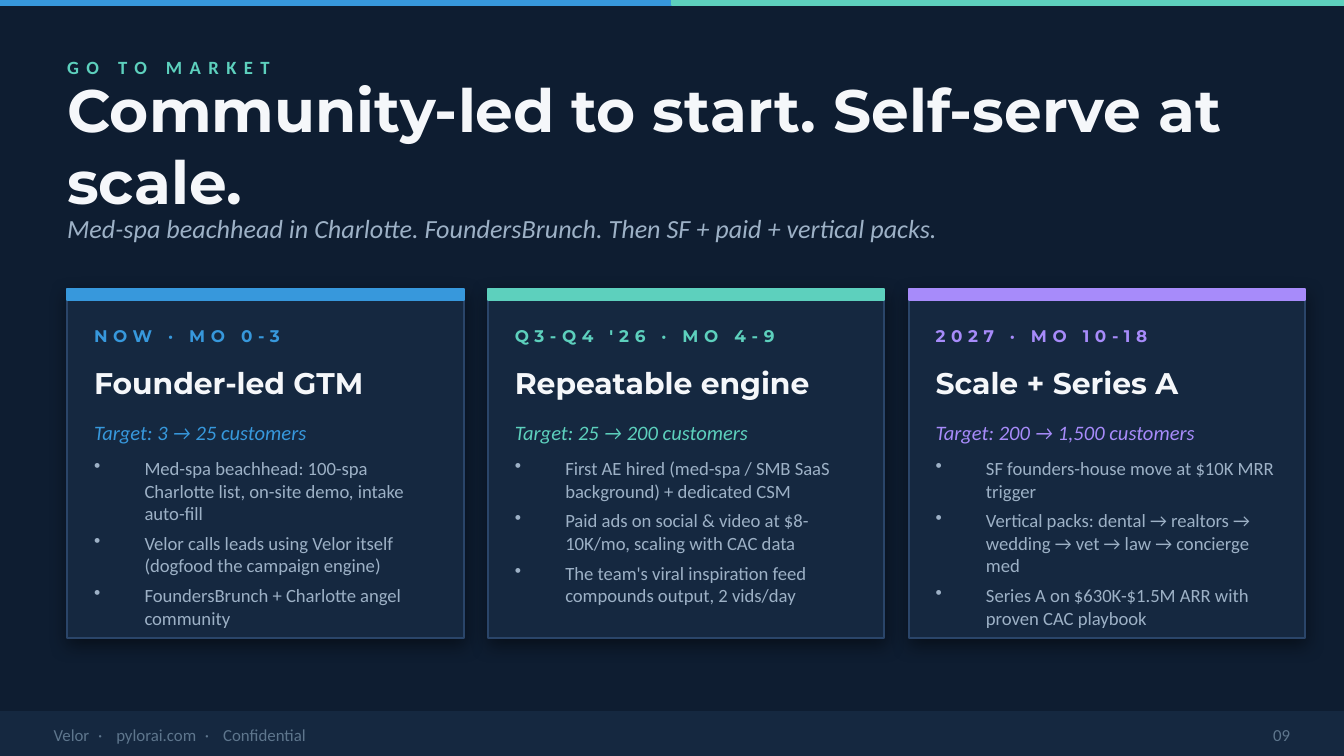
from dataclasses import dataclass

from lxml import etree
from pptx import Presentation
from pptx.dml.color import RGBColor
from pptx.enum import shapes, text
from pptx.oxml import ns
from pptx.util import Pt

NAVY, PANEL, EDGE = "0E1D31", "152840", "2A4569"
BLUE, TEAL, PURPLE = "3798DC", "5DD0BD", "A78BFA"
WHITE, MUTED, DIM = "F5F7FA", "9DB1C6", "5E768D"
BODY, HEADING = "Calibri", "Montserrat"
PAGE_WIDTH, PAGE_HEIGHT = 720, 405
MARGIN, CARD_TOP, CARD_WIDTH, CARD_HEIGHT = 36, 154.8, 212.4, 187.2
CARD_GAP, CARD_PADDING, BULLET_INDENT = 13, 14.4, 27


@dataclass(frozen=True)
class Area:
    left: float
    top: float
    width: float
    height: float


@dataclass(frozen=True)
class Style:
    size: float
    color: str
    name: str = BODY
    bold: bool = False
    italic: bool = False
    spacing: float = 0


@dataclass(frozen=True)
class Phase:
    period: str
    title: str
    target: str
    color: str
    actions: tuple[str, ...]


PHASES = (
    Phase("NOW · MO 0-3", "Founder-led GTM", "Target: 3 → 25 customers", BLUE, (
        "Med-spa beachhead: 100-spa Charlotte list, on-site demo, intake auto-fill",
        "Velor calls leads using Velor itself (dogfood the campaign engine)",
        "FoundersBrunch + Charlotte angel community")),
    Phase("Q3-Q4 '26 · MO 4-9", "Repeatable engine", "Target: 25 → 200 customers", TEAL, (
        "First AE hired (med-spa / SMB SaaS background) + dedicated CSM",
        "Paid ads on social & video at $8-10K/mo, scaling with CAC data",
        "The team's viral inspiration feed compounds output, 2 vids/day")),
    Phase("2027 · MO 10-18", "Scale + Series A", "Target: 200 → 1,500 customers", PURPLE, (
        "SF founders-house move at $10K MRR trigger",
        "Vertical packs: dental → realtors → wedding → vet → law → concierge med",
        "Series A on $630K-$1.5M ARR with proven CAC playbook")),
)


def rgb(color: str) -> RGBColor:
    return RGBColor.from_string(color)


def place(shape, area: Area) -> None:
    shape.left, shape.top = Pt(area.left), Pt(area.top)
    shape.width, shape.height = Pt(area.width), Pt(area.height)


def add_block(page, area: Area, fill: str, line: str | None = None):
    block = page.shapes.add_shape(
        shapes.MSO_SHAPE.RECTANGLE, Pt(area.left), Pt(area.top), Pt(area.width), Pt(area.height))
    block.shadow.inherit = False
    block.fill.solid()
    block.fill.fore_color.rgb = rgb(fill)
    block.line.color.rgb = rgb(line or fill)
    block.line.width = Pt(1)
    return block


def add_shadow(shape) -> None:
    effects = shape._element.spPr.find(ns.qn("a:effectLst"))
    shadow = etree.SubElement(effects, ns.qn("a:outerShdw"), blurRad=str(Pt(10)),
                              dist=str(Pt(3)), dir="5400000", algn="bl", rotWithShape="0")
    black = etree.SubElement(shadow, ns.qn("a:srgbClr"), val="000000")
    etree.SubElement(black, ns.qn("a:alpha"), val="45000")


def set_spacing(span, points: float) -> None:
    span._r.get_or_add_rPr().set("spc", str(round(points * 100)))


def prepare_frame(shape, middle: bool = True):
    frame = shape.text_frame
    frame.word_wrap = True
    frame.auto_size = text.MSO_AUTO_SIZE.NONE
    frame.margin_left = frame.margin_right = frame.margin_top = frame.margin_bottom = 0
    frame.vertical_anchor = text.MSO_ANCHOR.MIDDLE if middle else text.MSO_ANCHOR.TOP
    return frame


def write(para, words: str, style: Style) -> None:
    span = para.add_run()
    span.text = words
    if style.spacing:
        set_spacing(span, style.spacing)
    font = para.font
    font.size, font.name = Pt(style.size), style.name
    font.bold, font.italic = style.bold, style.italic
    font.color.rgb = rgb(style.color)


def add_box(page, area: Area, middle: bool = True):
    box = page.shapes.add_textbox(Pt(0), Pt(0), Pt(0), Pt(0))
    place(box, area)
    return prepare_frame(box, middle)


def add_label(page, area: Area, words: str, style: Style):
    para = add_box(page, area).paragraphs[0]
    write(para, words, style)
    return para


def add_bullets(page, area: Area, items: tuple[str, ...], style: Style) -> None:
    frame = add_box(page, area, middle=False)
    for index, item in enumerate(items):
        para = frame.add_paragraph() if index else frame.paragraphs[0]
        para.space_after = Pt(4)
        properties = para._p.get_or_add_pPr()
        properties.set("marL", str(Pt(BULLET_INDENT)))
        properties.set("indent", str(-Pt(BULLET_INDENT)))
        etree.SubElement(properties, ns.qn("a:buChar"), char="•")
        write(para, item, style)


def add_card(page, phase: Phase, left: float) -> None:
    card = Area(left, CARD_TOP, CARD_WIDTH, CARD_HEIGHT)
    add_shadow(add_block(page, card, PANEL, EDGE))
    add_block(page, Area(left, CARD_TOP, CARD_WIDTH, 5.76), phase.color)

    def inner(top: float, height: float) -> Area:
        return Area(left + CARD_PADDING, CARD_TOP + top, CARD_WIDTH - 2 * CARD_PADDING, height)

    add_label(page, inner(14.4, 21.6), phase.period,
              Style(9, phase.color, HEADING, bold=True, spacing=3))
    add_label(page, inner(36, 28.8), phase.title, Style(16, WHITE, HEADING, bold=True))
    add_label(page, inner(66.24, 21.6), phase.target, Style(11, phase.color, italic=True))
    add_bullets(page, inner(90, 86.4), phase.actions, Style(10, MUTED))


def add_footer(page) -> None:
    add_block(page, Area(0, 381.6, PAGE_WIDTH, PAGE_HEIGHT - 381.6), PANEL)
    style = Style(9, DIM)
    para = add_box(page, Area(28.8, 383.76, 432, 20.16)).paragraphs[0]
    for index, part in enumerate(("Velor", "pylorai.com", "Confidential")):
        if index:
            write(para, " · ", Style(9, DIM, spacing=2.7))
        write(para, part, style)
    number = add_label(page, Area(648, 383.76, 43.2, 20.16), "09", style)
    number.alignment = text.PP_ALIGN.RIGHT


def add_header(page) -> None:
    half = PAGE_WIDTH / 2
    for index, color in enumerate((BLUE, TEAL)):
        add_block(page, Area(index * half, 0, half, 2.88), color)
    add_label(page, Area(MARGIN, 25.2, 432, 21.6), "GO TO MARKET",
              Style(10, TEAL, bold=True, spacing=4))
    title = page.shapes.title
    place(title, Area(MARGIN, 46.8, 648, 61.2))
    para = prepare_frame(title).paragraphs[0]
    para.alignment = text.PP_ALIGN.LEFT
    write(para, "Community-led to start. Self-serve at scale.",
          Style(32, WHITE, HEADING, bold=True))
    add_label(page, Area(MARGIN, 108, 648, 28.8),
              "Med-spa beachhead in Charlotte. FoundersBrunch. Then SF + paid + vertical packs.",
              Style(14, MUTED, italic=True))


def main() -> None:
    deck = Presentation()
    deck.slide_width, deck.slide_height = Pt(PAGE_WIDTH), Pt(PAGE_HEIGHT)
    page = deck.slides.add_slide(deck.slide_layouts.get_by_name("Title Only"))
    page.background.fill.solid()
    page.background.fill.fore_color.rgb = rgb(NAVY)
    add_header(page)
    for index, phase in enumerate(PHASES):
        add_card(page, phase, MARGIN + index * (CARD_WIDTH + CARD_GAP))
    add_footer(page)
    deck.save("out.pptx")


if __name__ == "__main__":
    main()
